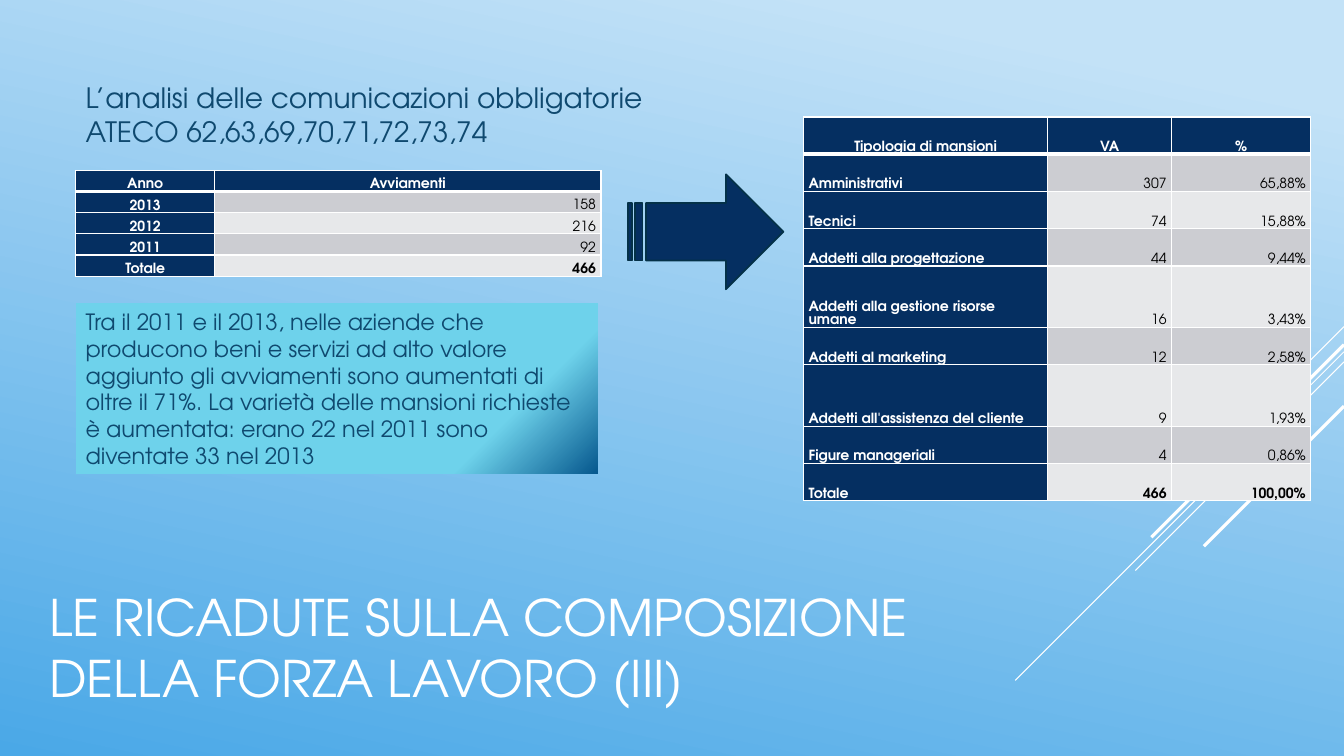
from lxml import etree
from pptx import Presentation
from pptx.dml.color import RGBColor
from pptx.enum.shapes import MSO_CONNECTOR, MSO_SHAPE
from pptx.enum.text import MSO_ANCHOR, MSO_AUTO_SIZE, PP_ALIGN
from pptx.oxml.ns import qn
from pptx.util import Inches, Pt

STRAIGHT = MSO_CONNECTOR.STRAIGHT
RECT, ARROW = MSO_SHAPE.RECTANGLE, MSO_SHAPE.STRIPED_RIGHT_ARROW
TOP, MIDDLE, BOTTOM = MSO_ANCHOR.TOP, MSO_ANCHOR.MIDDLE, MSO_ANCHOR.BOTTOM
LEFT, CENTER, RIGHT = PP_ALIGN.LEFT, PP_ALIGN.CENTER, PP_ALIGN.RIGHT
NO_FIT = MSO_AUTO_SIZE.NONE

FONT = "TeX Gyre Adventor"
WHITE = RGBColor(0xFF, 0xFF, 0xFF)
BLACK = RGBColor(0, 0, 0)
NAVY = RGBColor(0x05, 0x2F, 0x61)
EDGE = RGBColor(0x04, 0x31, 0x48)
INK = RGBColor(0x0F, 0x49, 0x6F)
BANDS = RGBColor(0xCC, 0xCD, 0xD2), RGBColor(0xE7, 0xE8, 0xEA)
SKY = (10, RGBColor(0xC3, 0xE2, 0xF7)), (100, RGBColor(0x4A, 0xA8, 0xE7))
GLOW = (79, RGBColor(0x6E, 0xD2, 0xEB)), (100, RGBColor(0x06, 0x58, 0x8E))

# Content
TITLE = "LE RICADUTE SULLA COMPOSIZIONE DELLA FORZA LAVORO (III)"
INTRO = "L’analisi delle comunicazioni obbligatorie ATECO 62,63,69,70,71,72,73,74"
NOTE = ("Tra il 2011 e il 2013, nelle aziende che producono beni e servizi ad alto "
        "valore aggiunto gli avviamenti sono aumentati di oltre il 71%. La varietà "
        "delle mansioni richieste è aumentata: erano 22 nel 2011 sono diventate 33 "
        "nel 2013")
YEARS = [
    ("Anno", "Avviamenti"),
    ("2013", "158"),
    ("2012", "216"),
    ("2011", "92"),
    ("Totale", "466"),
]
JOBS = [
    ("Tipologia di mansioni", "VA", "%"),
    ("Amministrativi", "307", "65,88%"),
    ("Tecnici", "74", "15,88%"),
    ("Addetti alla progettazione", "44", "9,44%"),
    ("Addetti alla gestione risorse umane", "16", "3,43%"),
    ("Addetti al marketing", "12", "2,58%"),
    ("Addetti all'assistenza del cliente", "9", "1,93%"),
    ("Figure manageriali", "4", "0,86%"),
    ("Totale", "466", "100,00%"),
]
# Diagonal rays from the right edge: start height, run, weight
RAYS = [(3.24, 1, 0.75), (3.49, 3.26, 0.75), (3.59, 2.07, 0.75),
        (3.42, 1.91, 2.25), (4.03, 1.39, 2.25)]
WIDE = 13.33


def place(shape, *box):
    shape.left, shape.top, shape.width, shape.height = map(Inches, box)


def blend(fill, stops, angle):
    fill.gradient()
    fill.gradient_angle = 360 - angle
    for stop, (pos, color) in zip(fill.gradient_stops, stops):
        stop.position = pos / 100
        stop.color.rgb = color


def style(par, size, color, bold=False, align=LEFT):
    par.alignment = align
    for run in par.runs:
        font = run.font
        font.name, font.size, font.bold = FONT, Pt(size), bold
        font.color.rgb = color


def write(shape, text, size, color, anchor):
    frame = shape.text_frame
    frame.text = text
    frame.word_wrap = True
    frame.auto_size = NO_FIT
    frame.vertical_anchor = anchor
    style(frame.paragraphs[0], size, color)
    return frame.paragraphs[0]


def rule(cell, side, weight):
    line = etree.SubElement(cell._tc.get_or_add_tcPr(), qn("a:ln" + side),
                            w=str(Pt(weight)))
    fill = etree.SubElement(line, qn("a:solidFill"))
    etree.SubElement(fill, qn("a:srgbClr"), val=str(WHITE))


def add_grid(slide, rows, left, top, widths, heights, align):
    frame = slide.shapes.add_table(
        len(rows), len(widths), Inches(left), Inches(top),
        Inches(sum(widths)), Inches(sum(heights)))
    table = frame.table
    for col, width in zip(table.columns, widths):
        col.width = Inches(width)
    for r, row in enumerate(rows):
        table.rows[r].height = Inches(heights[r])
        for c, text in enumerate(row):
            cell = table.cell(r, c)
            dark = r == 0 or c == 0
            cell.margin_left = cell.margin_right = Inches(0.05)
            cell.margin_top = cell.margin_bottom = 0
            cell.vertical_anchor = BOTTOM
            for side in "LRTB":
                heavy = (r, side) in ((0, "B"), (1, "T"))
                rule(cell, side, 3 if heavy else 1)
            cell.fill.solid()
            cell.fill.fore_color.rgb = NAVY if dark else BANDS[(r - 1) % 2]
            cell.text_frame.text = text
            par = cell.text_frame.paragraphs[0]
            par.line_spacing = 1.07
            side = CENTER if r == 0 else align if c == 0 else RIGHT
            style(par, 10, WHITE if dark else BLACK,
                  dark or r == len(rows) - 1, side)


def main():
    deck = Presentation()
    deck.slide_width, deck.slide_height = Inches(WIDE), Inches(7.5)
    slide = deck.slides.add_slide(deck.slide_layouts[1])
    shapes = slide.shapes
    blend(slide.background.fill, SKY, 102)

    # Diagonal rays
    for top, run, weight in RAYS:
        ray = shapes.add_connector(STRAIGHT, Inches(WIDE), Inches(top),
                                   Inches(WIDE - run), Inches(top + run))
        ray.line.color.rgb = WHITE
        ray.line.width = Pt(weight)
        etree.SubElement(ray._element.spPr, qn("a:effectLst"))

    # Title and intro
    title, body = slide.placeholders
    place(title, 0.39, 5.59, 9.33, 1.65)
    write(title, TITLE, 36, WHITE, MIDDLE)
    place(body, 0.75, 0.75, 6.48, 3.95)
    par = write(body, INTRO, 20, INK, TOP)
    par.space_after = Pt(6)
    props = par._p.get_or_add_pPr()
    props.set("marL", "0")
    props.set("indent", "0")
    etree.SubElement(props, qn("a:buNone"))

    # Note box and arrow
    note = shapes.add_shape(RECT, 0, 0, 0, 0)
    place(note, 0.75, 3.01, 5.18, 1.69)
    blend(note.fill, GLOW, 45)
    note.line.fill.background()
    write(note, NOTE, 16, INK, MIDDLE)
    arrow = shapes.add_shape(ARROW, 0, 0, 0, 0)
    place(arrow, 6.23, 1.73, 1.54, 1.14)
    arrow.fill.solid()
    arrow.fill.fore_color.rgb = NAVY
    arrow.line.color.rgb = EDGE
    arrow.line.width = Pt(1.25)
    for shape in (note, arrow):
        shape.shadow.inherit = False

    # Tables
    add_grid(slide, YEARS, 0.75, 1.69, (1.38, 3.83), [0.21] * 5, CENTER)
    tall = [0.61 if len(row[0]) > 33 else 0.37 for row in JOBS]
    add_grid(slide, JOBS, 7.97, 1.16, (2.42, 1.23, 1.38), tall, LEFT)

    deck.save("out.pptx")


if __name__ == "__main__":
    main()
